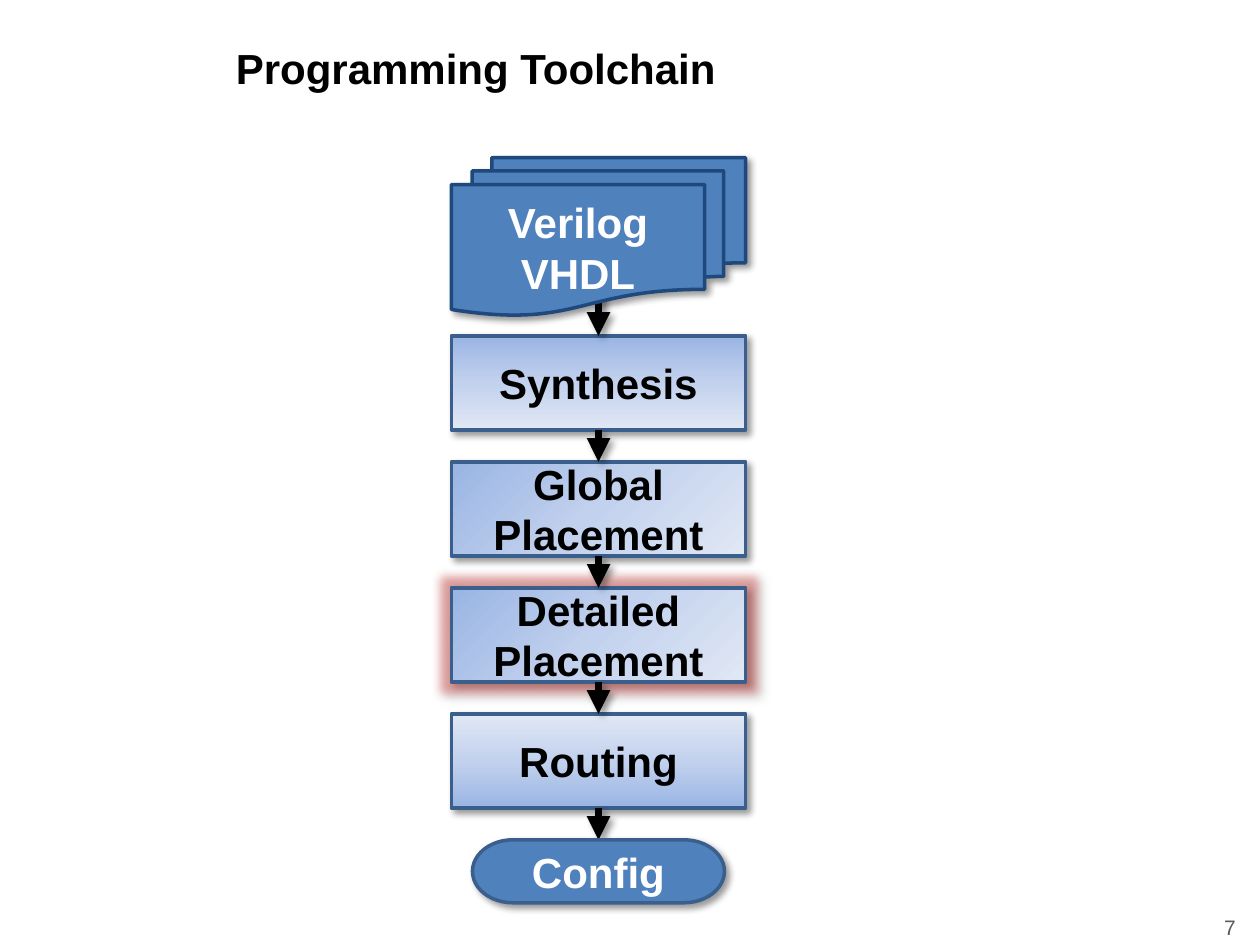
from dataclasses import dataclass

from pptx import Presentation
from pptx.dml.color import RGBColor
from pptx.enum.shapes import MSO_CONNECTOR, MSO_SHAPE
from pptx.enum.text import MSO_ANCHOR, PP_ALIGN
from pptx.oxml import parse_xml
from pptx.oxml.ns import nsdecls
from pptx.util import Cm, Pt

PROCESS = MSO_SHAPE.FLOWCHART_PROCESS
DOCUMENTS = MSO_SHAPE.FLOWCHART_MULTIDOCUMENT
TERMINATOR = MSO_SHAPE.FLOWCHART_TERMINATOR
STRAIGHT = MSO_CONNECTOR.STRAIGHT
MIDDLE = MSO_ANCHOR.MIDDLE
LEFT, CENTER, RIGHT = PP_ALIGN.LEFT, PP_ALIGN.CENTER, PP_ALIGN.RIGHT


@dataclass(frozen=True)
class Theme:
    font: str = "Arial"
    ink: str = "000000"
    light: str = "FFFFFF"
    muted: str = "595959"
    accent: str = "4F81BD"
    outline: str = "3A5F8C"
    document_outline: str = "1F497D"
    glow: str = "D03A36"
    gradient: tuple = ("9AB5E4", "C2D1ED", "E1E8F5")
    body_size: int = 24
    number_size: int = 12
    outline_width: float = 2
    arrow_width: float = 4.5


class FlowSlide:
    """Draws the elements of a flow chart on one slide in a single style."""

    def __init__(self, slide, theme):
        self.slide = slide
        self.theme = theme

    def set_text(self, frame, text, color, size, align, bold=True):
        frame.word_wrap = True
        frame.vertical_anchor = MIDDLE
        frame.text = text
        for paragraph in frame.paragraphs:
            paragraph.alignment = align
            for run in paragraph.runs:
                run.font.name = self.theme.font
                run.font.size = Pt(size)
                run.font.bold = bold
                run.font.color.rgb = RGBColor.from_string(color)

    def title(self, text, left, top, width, height):
        heading = self.slide.shapes.title
        heading.left, heading.top = Cm(left), Cm(top)
        heading.width, heading.height = Cm(width), Cm(height)
        self.set_text(heading.text_frame, text, self.theme.ink, self.theme.body_size, LEFT)

    def page_number(self, text, left, top, width, height):
        number = self.slide.shapes.add_textbox(Cm(left), Cm(top), Cm(width), Cm(height))
        self.set_text(number.text_frame, text, self.theme.muted,
                      self.theme.number_size, RIGHT, bold=False)

    def effects(self, element, glowing=False):
        glow = (f'<a:glow rad="{Pt(11)}"><a:srgbClr val="{self.theme.glow}">'
                '<a:alpha val="40000"/></a:srgbClr></a:glow>') if glowing else ""
        element.spPr.append(parse_xml(
            f'<a:effectLst {nsdecls("a")}>{glow}'
            f'<a:outerShdw blurRad="{Pt(4)}" dist="{Pt(3)}" dir="2700000" '
            f'algn="tl" rotWithShape="0"><a:srgbClr val="{self.theme.ink}">'
            '<a:alpha val="40000"/></a:srgbClr></a:outerShdw></a:effectLst>'))

    def gradient(self, element, angle):
        stops = "".join(
            f'<a:gs pos="{index * 50000}"><a:srgbClr val="{color}"/></a:gs>'
            for index, color in enumerate(self.theme.gradient))
        if angle is None:
            direction = '<a:path path="circle"><a:fillToRect r="100000" b="100000"/></a:path>'
        else:
            direction = f'<a:lin ang="{angle * 60000}" scaled="0"/>'
        element.spPr.insert(2, parse_xml(
            f'<a:gradFill {nsdecls("a")} rotWithShape="1">'
            f'<a:gsLst>{stops}</a:gsLst>{direction}</a:gradFill>'))

    def node(self, kind, text, left, top, width, height, color, outline, glowing=False):
        node = self.slide.shapes.add_shape(kind, Cm(left), Cm(top), Cm(width), Cm(height))
        node.line.color.rgb = RGBColor.from_string(outline)
        node.line.width = Pt(self.theme.outline_width)
        self.set_text(node.text_frame, text, color, self.theme.body_size, CENTER)
        self.effects(node._element, glowing)
        return node

    def step(self, text, left, top, width, height, angle, glowing):
        step = self.node(PROCESS, text, left, top, width, height,
                         self.theme.ink, self.theme.outline, glowing)
        self.gradient(step._element, angle)

    def endpoint(self, kind, text, left, top, width, height, outline):
        endpoint = self.node(kind, text, left, top, width, height, self.theme.light, outline)
        endpoint.fill.solid()
        endpoint.fill.fore_color.rgb = RGBColor.from_string(self.theme.accent)

    def arrow(self, x, top, bottom):
        arrow = self.slide.shapes.add_connector(STRAIGHT, Cm(x), Cm(top), Cm(x), Cm(bottom))
        arrow.line.color.rgb = RGBColor.from_string(self.theme.ink)
        arrow.line.width = Pt(self.theme.arrow_width)
        arrow.line._get_or_add_ln().append(
            parse_xml(f'<a:tailEnd {nsdecls("a")} type="triangle"/>'))
        self.effects(arrow._element)


def main():
    presentation = Presentation()
    presentation.slide_width, presentation.slide_height = Cm(25.4), Cm(19.05)
    theme = Theme()
    flow = FlowSlide(presentation.slides.add_slide(presentation.slide_layouts[5]), theme)

    flow.title("Programming Toolchain", 4.5, 0.33, 18.54, 2.06)
    flow.page_number("7", 19.23, 18.34, 5.93, 0.71)

    left, width, height = 9.1, 5.93, 1.9
    first_top, pitch = 6.77, 2.54
    center = left + width / 2
    steps = [
        ("Synthesis", 90, False),
        ("Global\nPlacement", 45, False),
        ("Detailed\nPlacement", None, True),
        ("Routing", 270, False),
    ]
    for index, (name, angle, glowing) in enumerate(steps):
        flow.step(name, left, first_top + index * pitch, width, height, angle, glowing)

    flow.arrow(center, 5.72, first_top)
    flow.endpoint(DOCUMENTS, "Verilog\nVHDL", left, 3.18, width, 3.18,
                  theme.document_outline)
    for index in range(len(steps)):
        step_top = first_top + index * pitch
        flow.arrow(center, step_top + height, step_top + pitch)

    config_width = 5.08
    flow.endpoint(TERMINATOR, "Config", center - config_width / 2,
                  first_top + len(steps) * pitch, config_width, 1.27, theme.outline)

    presentation.save("out.pptx")


if __name__ == "__main__":
    main()
